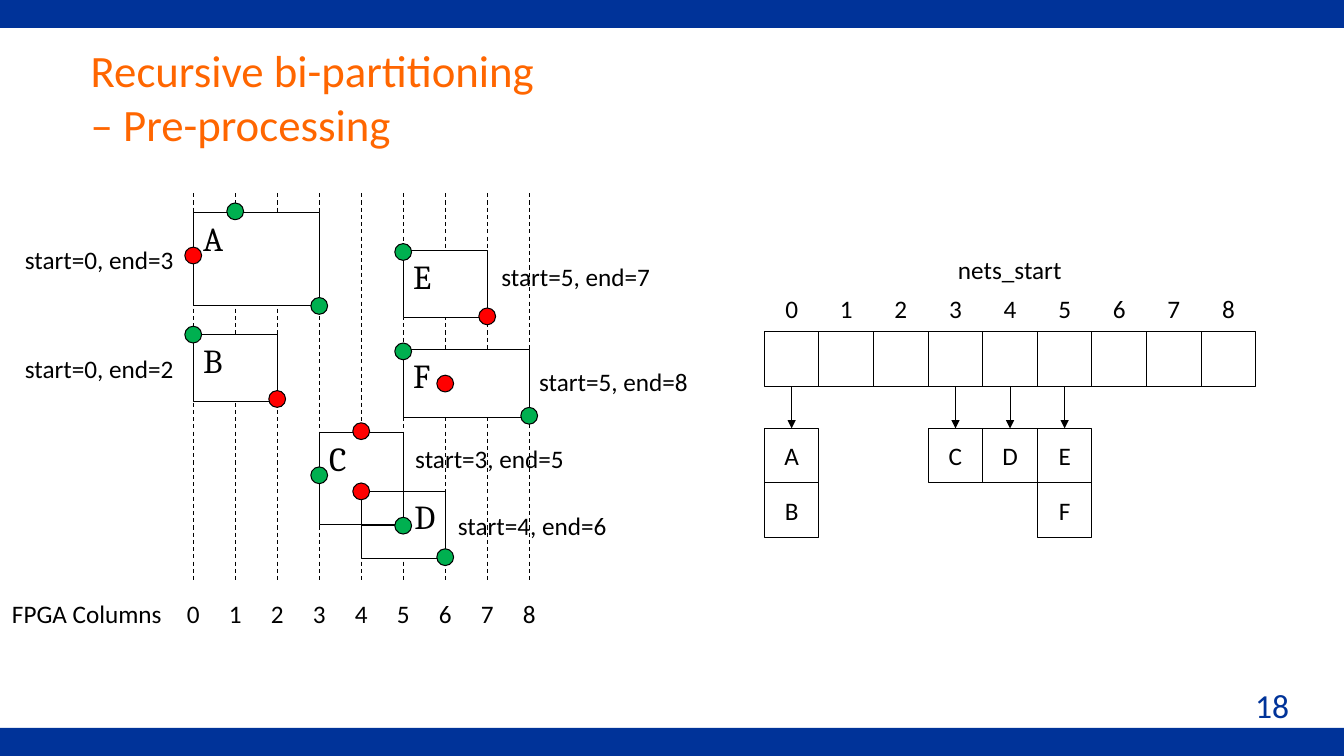
"""Build the slide on pre-processing nets for recursive bi-partitioning."""
from lxml.etree import SubElement as Sub
from pptx import Presentation
from pptx.dml.color import RGBColor as Rgb
from pptx.enum.dml import MSO_LINE as Dash
from pptx.enum.shapes import MSO_CONNECTOR as Wire, MSO_SHAPE as Kind
from pptx.enum.text import MSO_ANCHOR as Anchor, PP_ALIGN as Align
from pptx.oxml.ns import qn
from pptx.util import Pt

HUE = {"navy": "003399", "orange": "FF6600", "black": "000000",
       "white": "FFFFFF", "green": "00B050", "red": "FF0000"}

deck = Presentation()
deck.slide_width, deck.slide_height = Pt(960), Pt(540)
slide = deck.slides.add_slide(deck.slide_layouts[5])
shapes = slide.shapes


def put(text, x, y, w, h, kind=None, fill=None, edge="black", size=18,
        face="Calibri", hue="black", align=Align.CENTER, anchor=Anchor.TOP):
    """Add a text box, or a shape of the given kind, and format its text."""
    spot = Pt(x), Pt(y), Pt(w), Pt(h)
    if kind is None:
        item = shapes.add_textbox(*spot)
    else:
        item = shapes.add_shape(kind, *spot)
        item.shadow.inherit = False
        if fill:
            item.fill.solid()
            item.fill.fore_color.rgb = Rgb.from_string(HUE[fill])
        else:
            item.fill.background()
        if edge:
            item.line.color.rgb = Rgb.from_string(HUE[edge])
            item.line.width = Pt(0.75)
        else:
            item.line.fill.background()
    if text:
        frame = item.text_frame
        frame.word_wrap = True
        frame.vertical_anchor = anchor
        par = frame.paragraphs[0]
        par.text = text
        par.alignment = align
        par.font.size = Pt(size)
        par.font.name = face
        par.font.color.rgb = Rgb.from_string(HUE[hue])
    return item


def link(x, top, end):
    """Add a thin vertical line."""
    line = shapes.add_connector(Wire.STRAIGHT, Pt(x), Pt(top), Pt(x), Pt(end))
    line.line.color.rgb = Rgb.from_string(HUE["black"])
    line.line.width = Pt(0.75)
    Sub(line._element.spPr, qn("a:effectLst"))
    return line


for y in (520, 0):
    put("", 0, y, 960, 20, kind=Kind.RECTANGLE, fill="navy", edge=None)
put("18", 728, 486, 200, 36, size=24, hue="navy", align=Align.RIGHT)

title = shapes.title
title.left, title.top, title.width, title.height = Pt(57.6), Pt(24), Pt(685), Pt(90)
title.text_frame.vertical_anchor = Anchor.MIDDLE
head = title.text_frame.paragraphs[0]
head.alignment = Align.LEFT
head.add_run().text = "Recursive bi-partitioning"
head.add_line_break()
head.add_run().text = "– Pre-processing"
for run in head.runs:
    run.font.size = Pt(32)
    run.font.name = "Calibri"
    run.font.color.rgb = Rgb.from_string(HUE["orange"])

LEFT, STEP, DOT = 138, 30, 12
for col in range(9):
    x = LEFT + col * STEP
    link(x, 138, 414).line.dash_style = Dash.DASH
    put(str(col), x - 18, 424, 36, 29)
put("FPGA Columns", 1.5, 424, 138, 29, align=Align.LEFT)

nets = [
    ("A", 0, 3, 152, 66, 0, 171, [(1, 151, "green"), (0, 182.5, "red"), (3, 218.5, "green")]),
    ("B", 0, 2, 239, 48, 0, 249, [(0, 239, "green"), (2, 285, "red")]),
    ("F", 5, 8, 250, 48, 378, 258, [(5, 251, "green"), (8, 297, "green"), (6, 274, "red")]),
    ("E", 5, 7, 179, 48, 351, 183, [(7, 226, "red"), (5, 180, "green")]),
    ("D", 4, 6, 351, 48, 320, 361, [(6, 398, "green")]),
    ("C", 3, 5, 309, 66, 289.5, 313, [(4, 308, "red"), (3, 339.5, "green")]),
    ("", 4, 5, 351, 24, 0, 0, [(5, 375.5, "green"), (4, 351, "red")]),
]
for name, start, end, top, high, side, base, pins in nets:
    put(name, LEFT + start * STEP, top, (end - start) * STEP, high,
        kind=Kind.RECTANGLE, fill="white", size=24, face="Cambria",
        align=Align.RIGHT if name == "D" else Align.LEFT)
    for col, y, hue in pins:
        put("", LEFT + col * STEP - DOT / 2, y - DOT / 2, DOT, DOT,
            kind=Kind.OVAL, fill=hue)
    if name:
        put(f"start={start}, end={end}", side, base, 131, 29,
            align=Align.LEFT if side else Align.RIGHT)

EDGE, CELL, ROW, LIST = 546, 39, 237, 306
put("nets_start", 628, 178, 186.5, 29)
lists = {0: "AB", 3: "C", 4: "D", 5: "EF"}
for col in range(9):
    x = EDGE + col * CELL
    put(str(col), x, 206, CELL, 29)
    cell = put("", x, ROW, CELL, CELL, kind=Kind.RECTANGLE)
    items = [put(name, x, LIST + i * CELL, CELL, CELL, kind=Kind.RECTANGLE,
                 anchor=Anchor.MIDDLE)
             for i, name in enumerate(lists.get(col, ""))]
    if items:
        arrow = link(x + CELL / 2, ROW + CELL, LIST)
        arrow.begin_connect(cell, 2)
        arrow.end_connect(items[0], 0)
        Sub(arrow.line._get_or_add_ln(), qn("a:tailEnd"), type="triangle")

deck.save("out.pptx")
